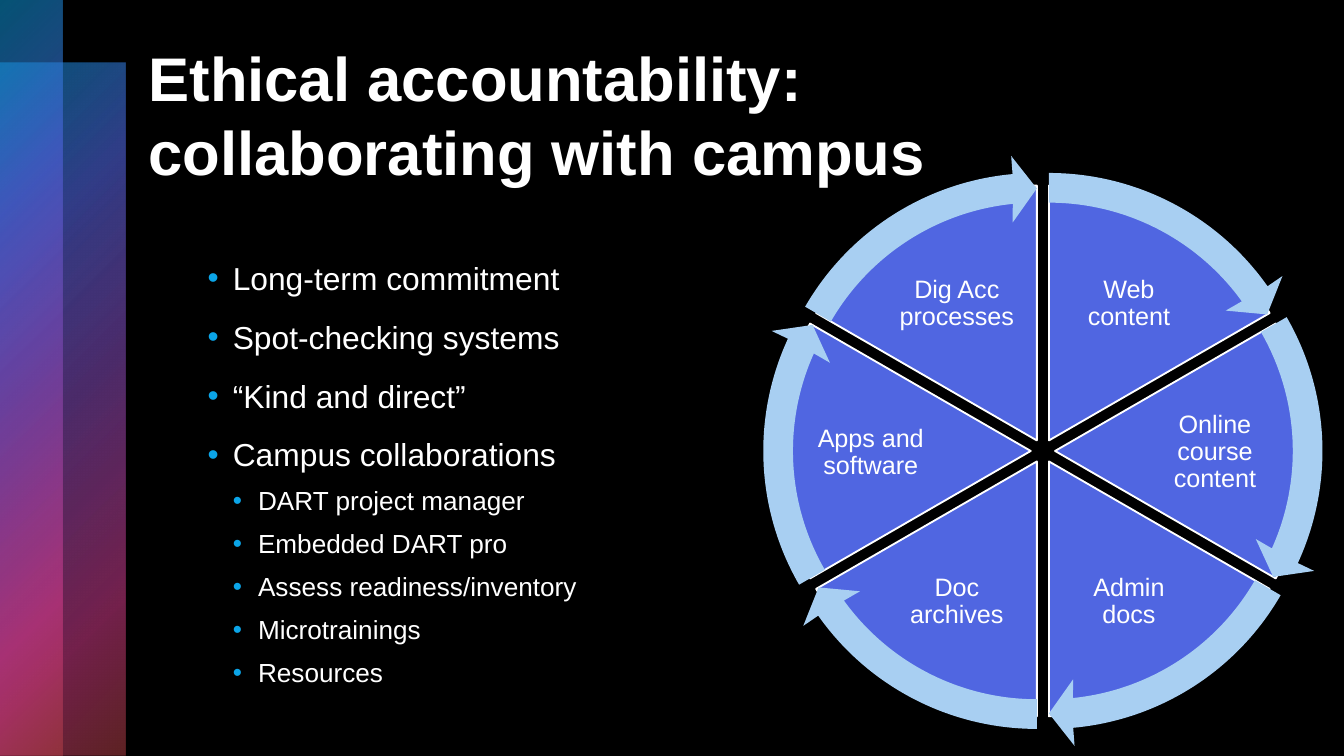
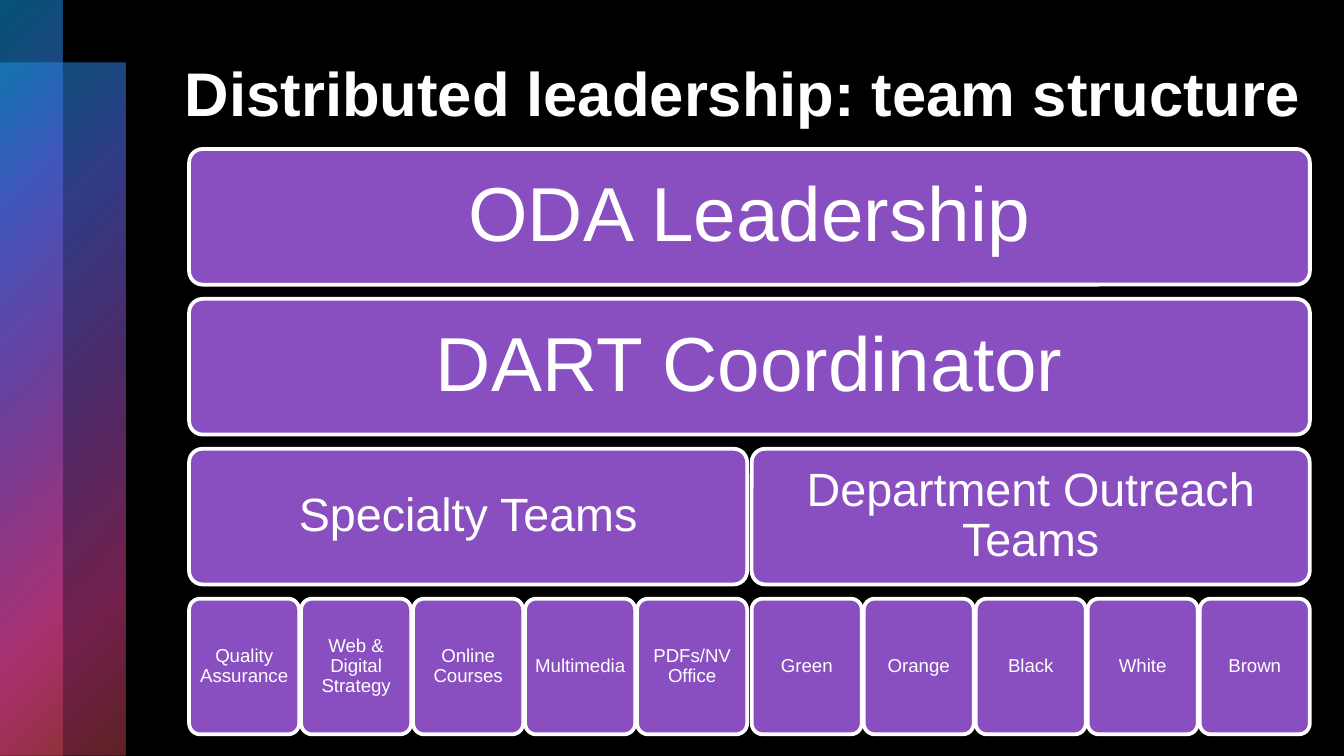
from math import cos, radians, sin, tan

from lxml import etree
from pptx import Presentation
from pptx.dml import color
from pptx.enum import shapes, text
from pptx.oxml import ns, parse_xml
from pptx.util import Pt

FONT = "Arial"
BLACK, WHITE = "000000", "FFFFFF"
BLUE, SKY, INDIGO, PURPLE = "0BA5E8", "A8CFF2", "5066E1", "894EC0"
BAND_STOPS = [(0, BLUE, 50), (25, INDIGO, 60), (50, PURPLE, 55),
              (81, "E54196", 50), (99, "BE4449", 50), (100, "BE4449", 50)]
BANDS = [(0, 33.4, 67.3, 371.6), (0, 0, 33.4, 405)]

COMMITMENTS = [
    (0, "Long-term commitment"),
    (0, "Spot-checking systems"),
    (0, "“Kind and direct”"),
    (0, "Campus collaborations"),
    (1, "DART project manager"),
    (1, "Embedded DART pro"),
    (1, "Assess readiness/inventory"),
    (1, "Microtrainings"),
    (1, "Resources"),
]
CAMPUS_AREAS = ["Web content", "Online course content", "Admin docs",
                "Doc archives", "Apps and software", "Dig Acc processes"]
LEADERS = ["ODA Leadership", "DART Coordinator"]
TEAMS = {
    "Specialty Teams": ["Quality Assurance", "Web & Digital Strategy",
                        "Online Courses", "Multimedia", "PDFs/NV Office"],
    "Department Outreach Teams": ["Green", "Orange", "Black", "White", "Brown"],
}


def rgb(hex_code):
    return color.RGBColor.from_string(hex_code)


def paint(shape, fill, line=None, weight=1):
    shape.shadow.inherit = False
    shape.fill.solid()
    shape.fill.fore_color.rgb = rgb(fill)
    if line:
        shape.line.color.rgb = rgb(line)
        shape.line.width = Pt(weight)
    else:
        shape.line.fill.background()


def set_frame(frame, inset_x, inset_y, anchor):
    frame.word_wrap = True
    frame.margin_left = frame.margin_right = Pt(inset_x)
    frame.margin_top = frame.margin_bottom = Pt(inset_y)
    frame.vertical_anchor = anchor


def style(paragraph, size, spacing, bold=False, align=text.PP_ALIGN.LEFT):
    paragraph.alignment = align
    paragraph.line_spacing = spacing
    for run in paragraph.runs:
        run.font.name = FONT
        run.font.size = Pt(size)
        run.font.bold = bold
        run.font.color.rgb = rgb(WHITE)


def centre_text(shape, words, size, inset):
    frame = shape.text_frame
    set_frame(frame, inset, inset, text.MSO_ANCHOR.MIDDLE)
    frame.text = words
    style(frame.paragraphs[0], size, 0.9, align=text.PP_ALIGN.CENTER)


def add_text_box(slide, box):
    frame = slide.shapes.add_textbox(*map(Pt, box)).text_frame
    set_frame(frame, 5.4, 2.7, text.MSO_ANCHOR.TOP)
    return frame


def add_backdrop(slide):
    backdrop = slide.shapes.add_shape(
        shapes.MSO_SHAPE.RECTANGLE, 0, 0, Pt(720), Pt(405))
    paint(backdrop, BLACK)


def add_bands(slide):
    """Two translucent gradient strips down the left edge."""
    stops = "".join(
        f'<a:gs pos="{at * 1000}"><a:srgbClr val="{tint}">'
        f'<a:alpha val="{alpha * 1000}"/></a:srgbClr></a:gs>'
        for at, tint, alpha in BAND_STOPS)
    for box in BANDS:
        band = slide.shapes.add_shape(shapes.MSO_SHAPE.RECTANGLE, *map(Pt, box))
        paint(band, BLUE)
        properties = band._element.spPr
        properties.replace(properties.find(ns.qn("a:solidFill")), parse_xml(
            f'<a:gradFill {ns.nsdecls("a")}><a:gsLst>{stops}</a:gsLst>'
            '<a:path path="circle"><a:fillToRect r="100000" b="100000"/></a:path>'
            '</a:gradFill>'))


def add_title(slide, words, box):
    frame = add_text_box(slide, box)
    frame.text = words
    style(frame.paragraphs[0], 33, 1, bold=True)


def add_bullets(slide, items, box):
    frame = add_text_box(slide, box)
    frame.text = "\n".join(words for _, words in items)
    for index, (paragraph, (level, _)) in enumerate(zip(frame.paragraphs, items)):
        paragraph.level = level
        style(paragraph, (17, 14)[level], 1.1)
        if index:
            paragraph.space_before = Pt((9, 4.5)[level])
        properties = paragraph._p.get_or_add_pPr()
        properties.set("marL", str(Pt(13.5 * (level + 1))))
        properties.set("indent", str(-Pt(13.5)))
        tint = etree.SubElement(properties, ns.qn("a:buClr"))
        etree.SubElement(tint, ns.qn("a:srgbClr")).set("val", BLUE)
        etree.SubElement(properties, ns.qn("a:buFont")).set("typeface", FONT)
        etree.SubElement(properties, ns.qn("a:buChar")).set("char", "•")


def polar(centre, radius, angle):
    x, y = centre
    return x + radius * cos(radians(angle)), y + radius * sin(radians(angle))


def arc_curve(centre, radius, start, end):
    """Control points and end point of one Bézier curve along an arc."""
    pull = 4 / 3 * tan(radians(end - start) / 4) * radius
    first = polar(polar(centre, radius, start), pull, start + 90)
    second = polar(polar(centre, radius, end), -pull, end + 90)
    return [first, second, polar(centre, radius, end)]


def add_arc_arrow(slide, centre, radius, start):
    """Curved arrow just outside a wedge, pointing clockwise to its far edge."""
    outer, inner, half = radius + 6.8, radius - 9.1, radius + 16.9
    left, top = centre[0] - half, centre[1] - half
    hub = half, half
    steps = [("moveTo", [polar(hub, outer, start)]),
             ("cubicBezTo", arc_curve(hub, outer, start, start + 54.8))]
    steps += [("lnTo", [polar(hub, reach, start + turn)]) for reach, turn in
              [(radius + 16.5, 54.85), (radius - 1.5, 60),
               (radius - 19, 53.7), (inner, 54.2)]]
    steps.append(("cubicBezTo", arc_curve(hub, inner, start + 54.2, start)))

    builder = slide.shapes.build_freeform(Pt(left), Pt(top))
    builder.add_line_segments(
        [(Pt(left + x), Pt(top + y)) for x, y in
         [(2 * half, 0), (2 * half, 2 * half), (0, 2 * half)]])
    arrow = builder.convert_to_shape()
    outline = arrow._element.spPr.find(".//" + ns.qn("a:path"))
    for corner in list(outline):
        outline.remove(corner)
    for command, points in steps:
        step = etree.SubElement(outline, ns.qn("a:" + command))
        for x, y in points:
            point = etree.SubElement(step, ns.qn("a:pt"))
            point.set("x", str(Pt(x)))
            point.set("y", str(Pt(y)))
    etree.SubElement(outline, ns.qn("a:close"))
    paint(arrow, SKY)


def add_wheel(slide, areas, box):
    """Cycle of equal wedges, each set slightly out from the centre."""
    left, top, size = box
    hub = left + size / 2, top + size / 2
    gap = 6.5
    radius = size / 2 - gap
    turn = 360 / len(areas)
    starts = [(270 + turn * index) % 360 for index in range(len(areas))]
    centres = [polar(hub, gap, start + turn / 2) for start in starts]
    label_hub = hub[0], hub[1] + 0.9
    label_width, label_height = 71.5, 55
    for area, (x, y), start in zip(areas, centres, starts):
        wedge = slide.shapes.add_shape(
            shapes.MSO_SHAPE.PIE, Pt(x - radius), Pt(y - radius),
            Pt(2 * radius), Pt(2 * radius))
        wedge.adjustments[0] = start * 0.6
        wedge.adjustments[1] = (start + turn) % 360 * 0.6
        paint(wedge, INDIGO, WHITE)
        x, y = polar(label_hub, 92.2, start + turn / 2)
        label = slide.shapes.add_textbox(
            Pt(x - label_width / 2), Pt(y - label_height / 2),
            Pt(label_width), Pt(label_height))
        centre_text(label, area, 13.5, 1.3)
    for centre, start in zip(centres, starts):
        add_arc_arrow(slide, centre, radius, start)


def add_block(slide, words, box, size, inset):
    block = slide.shapes.add_shape(
        shapes.MSO_SHAPE.ROUNDED_RECTANGLE, *map(Pt, box))
    block.adjustments[0] = 0.1
    paint(block, PURPLE, WHITE, 2)
    centre_text(block, words, size, inset)


def split(start, length, count, gap):
    """Start and length of each of count equal parts."""
    part = (length - gap * (count - 1)) / count
    return [(start + (part + gap) * index, part) for index in range(count)]


def add_team_chart(slide, leaders, teams, box):
    left, top, width, height = box
    tiers = split(top, height, len(leaders) + 2, 7.6)
    for leader, (y, tall) in zip(leaders, tiers):
        add_block(slide, leader, (left, y, width, tall), 41, 12.2)
    (team_y, tall), (member_y, _) = tiers[-2:]
    team_columns = split(left, width, len(teams), 2.4)
    for (team, members), (x, wide) in zip(teams.items(), team_columns):
        add_block(slide, team, (x, team_y, wide, tall), 25, 7.2)
        for member, (member_x, member_wide) in zip(
                members, split(x, wide, len(members), 1)):
            add_block(slide, member,
                      (member_x, member_y, member_wide, tall), 10, 2.7)


def add_slide(deck, title, title_box, backdrop=False):
    slide = deck.slides.add_slide(deck.slide_layouts[6])
    slide.background.fill.solid()
    slide.background.fill.fore_color.rgb = rgb(BLACK)
    if backdrop:
        add_backdrop(slide)
    add_bands(slide)
    add_title(slide, title, title_box)
    return slide


def main():
    deck = Presentation()
    deck.slide_width, deck.slide_height = Pt(720), Pt(405)

    accountability = add_slide(
        deck, "Ethical accountability: collaborating with campus",
        (74.2, 18.7, 560, 91.4))
    add_bullets(accountability, COMMITMENTS, (105.8, 133.9, 221.8, 250.6))
    add_wheel(accountability, CAMPUS_AREAS, (415.7, 98.6, 286))

    structure = add_slide(
        deck, "Distributed leadership: team structure",
        (93.6, 26.6, 615.6, 91.4), backdrop=True)
    add_team_chart(structure, LEADERS, TEAMS, (101.3, 79.8, 600.4, 313.6))

    deck.save("out.pptx")


if __name__ == "__main__":
    main()
